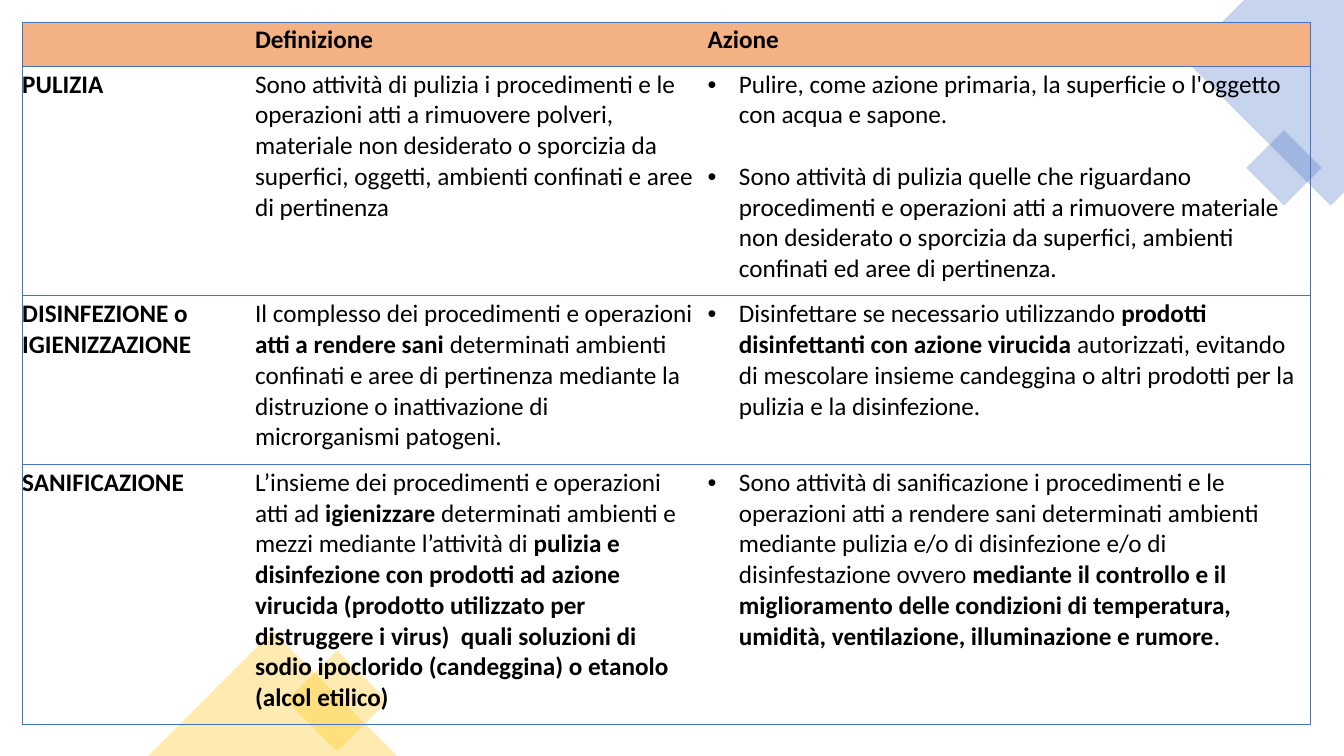
from lxml import etree
from pptx import Presentation
from pptx import util as u
from pptx.dml.color import RGBColor
from pptx.enum import shapes, text
from pptx.oxml import ns

WIDE, HIGH = u.Inches(13.33), u.Inches(7.5)
BLUE, GOLD, PEACH, BLACK = "4472C4", "FFC000", "F4B183", "000000"
COLS = [17.33, 33.68, 44.86]
ROWS = [5.8, 30.4, 22.3, 34.4]
CELLS = [
    [[], ["*Definizione*"], ["*Azione*"]],
    [["*PULIZIA*"],
     ["Sono attività di pulizia i procedimenti e le operazioni atti a rimuovere polveri, "
      "materiale non desiderato o sporcizia da superfici, oggetti, ambienti confinati "
      "e aree di pertinenza"],
     ["Pulire, come azione primaria, la superficie o l'oggetto con acqua e sapone.",
      "Sono attività di pulizia quelle che riguardano procedimenti e operazioni atti a "
      "rimuovere materiale non desiderato o sporcizia da superfici, ambienti confinati "
      "ed aree di pertinenza."]],
    [["*DISINFEZIONE o IGIENIZZAZIONE*"],
     ["Il complesso dei procedimenti e operazioni *atti a rendere sani *determinati "
      "ambienti confinati e aree di pertinenza mediante la distruzione o inattivazione "
      "di microrganismi patogeni."],
     ["Disinfettare se necessario utilizzando *prodotti disinfettanti con azione "
      "virucida *autorizzati, evitando di mescolare insieme candeggina o altri prodotti "
      "per la pulizia e la disinfezione."]],
    [["*SANIFICAZIONE*"],
     ["L’insieme dei procedimenti e operazioni atti ad *igienizzare* determinati "
      "ambienti e mezzi mediante l’attività di *pulizia e disinfezione con prodotti ad "
      "azione virucida (prodotto utilizzato per distruggere i virus)  quali soluzioni di "
      "sodio ipoclorido (candeggina) o etanolo (alcol etilico)*"],
     ["Sono attività di sanificazione i procedimenti e le operazioni atti a rendere sani "
      "determinati ambienti mediante pulizia e/o di disinfezione e/o di disinfestazione "
      "ovvero *mediante il controllo e il miglioramento delle condizioni di temperatura, "
      "umidità, ventilazione, illuminazione e rumore*."]],
]


def across(share):
    return u.Emu(round(WIDE * share / 100))


def down(share):
    return u.Emu(round(HIGH * share / 100))


def paint(fill, tone):
    fill.solid()
    fill.fore_color.rgb = RGBColor.from_string(tone)


def add(node, tag, **attrs):
    return etree.SubElement(node, ns.qn(tag), **attrs)


def tint(shape, tone):
    shape.shadow.inherit = False
    paint(shape.fill, tone)
    shape.line.fill.background()
    hue = shape._element.spPr.find(".//" + ns.qn("a:srgbClr"))
    add(hue, "a:alpha", val="30000")


def block(slide, kind, box, tone, turn=0):
    x, y, w, h = box
    shape = slide.shapes.add_shape(kind, across(x), down(y), across(w), down(h))
    shape.rotation = turn
    tint(shape, tone)


def band(slide, points, tone):
    spots = [(across(x), down(y)) for x, y in points]
    form = slide.shapes.build_freeform(*spots[0])
    form.add_line_segments(spots[1:], close=True)
    tint(form.convert_to_shape(), tone)


def edge(cell, tag, shown):
    line = add(cell._tc.get_or_add_tcPr(), tag, w=str(u.Pt(0.5)))
    if shown:
        add(add(line, "a:solidFill"), "a:srgbClr", val=BLUE)
    else:
        add(line, "a:noFill")


def bullet(para):
    props = para._p.get_or_add_pPr()
    props.set("marL", str(u.Inches(0.31)))
    props.set("indent", str(-u.Inches(0.31)))
    add(props, "a:buFont", typeface="Arial")
    add(props, "a:buChar", char="•")


def write(para, words):
    for i, part in enumerate(words.split("*")):
        if part:
            run = para.add_run()
            run.text = part
            font = run.font
            font.name, font.size, font.bold = "Calibri", u.Pt(18), i % 2 == 1
            font.color.rgb = RGBColor.from_string(BLACK)


def fill_cell(cell, lines, row, col):
    cell.margin_left = 0
    cell.margin_right = cell.margin_bottom = u.Inches(0.11)
    cell.margin_top = u.Inches(0.03 if row else 0.02)
    cell.vertical_anchor = text.MSO_ANCHOR.TOP if row else text.MSO_ANCHOR.BOTTOM
    for tag, shown in (("a:lnL", col == 0), ("a:lnR", col == len(COLS) - 1),
                       ("a:lnT", True), ("a:lnB", True)):
        edge(cell, tag, shown)
    if row:
        cell.fill.background()
    else:
        paint(cell.fill, PEACH)
    frame = cell.text_frame
    for i, words in enumerate(lines):
        para = frame.add_paragraph() if i else frame.paragraphs[0]
        if i:
            para.space_before = u.Pt(22)
        if row and col == 2:
            bullet(para)
        write(para, words)


def grid(slide):
    table = slide.shapes.add_table(
        len(ROWS), len(COLS), across(1.65), down(2.93),
        across(sum(COLS)), down(sum(ROWS))).table
    table.first_row = table.horz_banding = False
    for col, share in zip(table.columns, COLS):
        col.width = across(share)
    for row, share in zip(table.rows, ROWS):
        row.height = down(share)
    for r, line in enumerate(CELLS):
        for c, words in enumerate(line):
            fill_cell(table.cell(r, c), words, r, c)


def main():
    deck = Presentation()
    deck.slide_width, deck.slide_height = WIDE, HIGH
    slide = deck.slides.add_slide(deck.slide_layouts[6])
    kinds = shapes.MSO_SHAPE
    band(slide, [(100, 0), (92.57, 0), (88.15, 7.87), (99.02, 27.2), (100, 25.47)], BLUE)
    block(slide, kinds.RECTANGLE, (93.55, 18.67, 3.98, 7.07), BLUE, 45)
    block(slide, kinds.RECTANGLE, (22.43, 88, 5.33, 9.47), GOLD, 45)
    block(slide, kinds.ISOSCELES_TRIANGLE, (11.03, 83.47, 18.53, 16.53), GOLD)
    grid(slide)
    deck.save("out.pptx")


if __name__ == "__main__":
    main()
